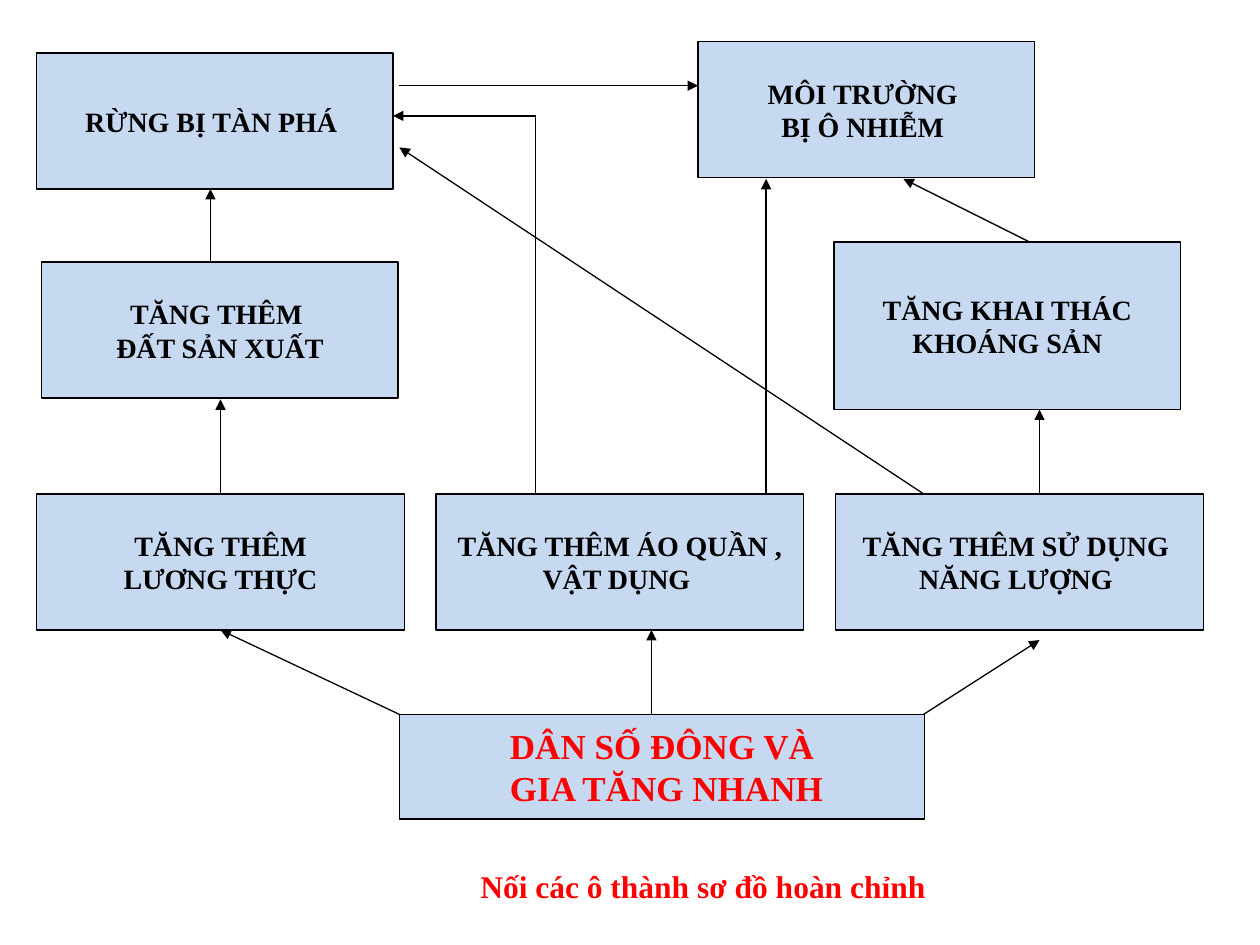
from dataclasses import dataclass

import pptx
import pptx.dml.color
import pptx.enum.shapes
import pptx.enum.text
import pptx.oxml
import pptx.oxml.ns
import pptx.util

Inches = pptx.util.Inches
Pt = pptx.util.Pt
RGB = pptx.dml.color.RGBColor


@dataclass(frozen=True)
class Theme:
    font: str = "Times New Roman"
    ink: RGB = RGB(0x00, 0x00, 0x00)
    accent: RGB = RGB(0xFF, 0x00, 0x00)
    box_fill: RGB = RGB(0xC6, 0xD9, 0xF1)
    line_width: float = 0.75
    cause_size: int = 20
    effect_size: int = 16
    caption_size: int = 18


def apply_format(target, values):
    for attribute, value in values.items():
        setattr(target, attribute, value)


class DiagramSlide:
    def __init__(self, slide, theme):
        self.slide = slide
        self.theme = theme

    def fill_text(self, frame, lines, size, color, frame_format):
        apply_format(frame, frame_format)
        for number, line in enumerate(lines):
            paragraph = frame.add_paragraph() if number else frame.paragraphs[0]
            paragraph.alignment = pptx.enum.text.PP_ALIGN.CENTER
            run = paragraph.add_run()
            run.text = line
            apply_format(run.font, {
                "name": self.theme.font, "size": Pt(size), "bold": True})
            run.font.color.rgb = color

    def stroke(self, line):
        line.color.rgb = self.theme.ink
        line.width = Pt(self.theme.line_width)

    def box(self, place, lines, size=None, color=None):
        shape = self.slide.shapes.add_shape(
            pptx.enum.shapes.MSO_SHAPE.RECTANGLE, *map(Inches, place))
        shape.shadow.inherit = False
        shape.fill.solid()
        shape.fill.fore_color.rgb = self.theme.box_fill
        self.stroke(shape.line)
        self.fill_text(shape.text_frame, lines, size or self.theme.effect_size,
                       color or self.theme.ink,
                       {"word_wrap": False,
                        "vertical_anchor": pptx.enum.text.MSO_ANCHOR.MIDDLE})

    def link(self, start, end, arrow=True):
        connector = self.slide.shapes.add_connector(
            pptx.enum.shapes.MSO_CONNECTOR.STRAIGHT,
            *map(Inches, (*start, *end)))
        self.stroke(connector.line)
        properties = connector._element.spPr
        if arrow:
            outline = properties.find(pptx.oxml.ns.qn("a:ln"))
            outline.append(pptx.oxml.parse_xml(
                f'<a:tailEnd {pptx.oxml.ns.nsdecls("a")} type="triangle"/>'))
        properties.append(pptx.oxml.parse_xml(
            f'<a:effectLst {pptx.oxml.ns.nsdecls("a")}/>'))

    def caption(self, place, text):
        textbox = self.slide.shapes.add_textbox(*map(Inches, place))
        self.fill_text(
            textbox.text_frame, [text], self.theme.caption_size,
            self.theme.accent,
            {"word_wrap": True,
             "auto_size": pptx.enum.text.MSO_AUTO_SIZE.SHAPE_TO_FIT_TEXT})


def main():
    presentation = pptx.Presentation()
    apply_format(presentation, {
        "slide_width": Inches(10), "slide_height": Inches(7.5)})
    theme = Theme()
    diagram = DiagramSlide(
        presentation.slides.add_slide(presentation.slide_layouts[6]), theme)

    # Row of growing needs, evenly spaced
    box_height = 1.08
    needs_top, needs_left, needs_step = 3.92, 0.29, 3.17
    needs = [
        ["TĂNG THÊM", " LƯƠNG THỰC "],
        ["TĂNG THÊM ÁO QUẦN ,", "VẬT DỤNG "],
        ["TĂNG THÊM SỬ DỤNG ", "NĂNG LƯỢNG "],
    ]
    for column, need in enumerate(needs):
        diagram.box((needs_left + column * needs_step, needs_top,
                     2.92, box_height), need)

    # Root cause
    cause_top = 5.67
    diagram.box((3.17, cause_top, 4.17, 0.83),
                ["DÂN SỐ ĐÔNG VÀ", " GIA TĂNG NHANH"],
                theme.cause_size, theme.accent)

    # Pressures and their final consequences
    for place, lines in [
        ((0.33, 2.08, 2.83, box_height), ["TĂNG THÊM ", " ĐẤT SẢN XUẤT "]),
        ((6.62, 1.92, 2.75, 1.33), ["TĂNG KHAI THÁC", " KHOÁNG SẢN "]),
        ((0.29, 0.42, 2.83, box_height), ["RỪNG BỊ TÀN PHÁ "]),
        ((5.54, 0.33, 2.67, box_height), ["MÔI TRƯỜNG ", "BỊ Ô NHIỄM "]),
    ]:
        diagram.box(place, lines)

    # Arrows from cause to effect
    goods_corner = (4.25, 0.92)
    for start, end in [
        ((3.17, cause_top), (1.75, 5)),
        ((5.17, cause_top), (5.17, 5)),
        ((7.33, cause_top), (8.25, 5.08)),
        ((1.75, needs_top), (1.75, 3.17)),
        ((8.25, needs_top), (8.25, 3.25)),
        ((6.08, needs_top), (6.08, 1.42)),
        (goods_corner, (3.12, 0.92)),
        ((1.67, 2.08), (1.67, 1.5)),
        ((8.17, 1.92), (7.17, 1.42)),
        ((7.33, needs_top), (3.17, 1.17)),
        ((3.17, 0.68), (5.54, 0.68)),
    ]:
        diagram.link(start, end)
    diagram.link((4.25, needs_top), goods_corner, arrow=False)

    # Task caption
    diagram.caption((3.33, 6.83, 4.5, 0.4), "Nối các ô thành sơ đồ hoàn chỉnh")

    presentation.save("out.pptx")


if __name__ == "__main__":
    main()
